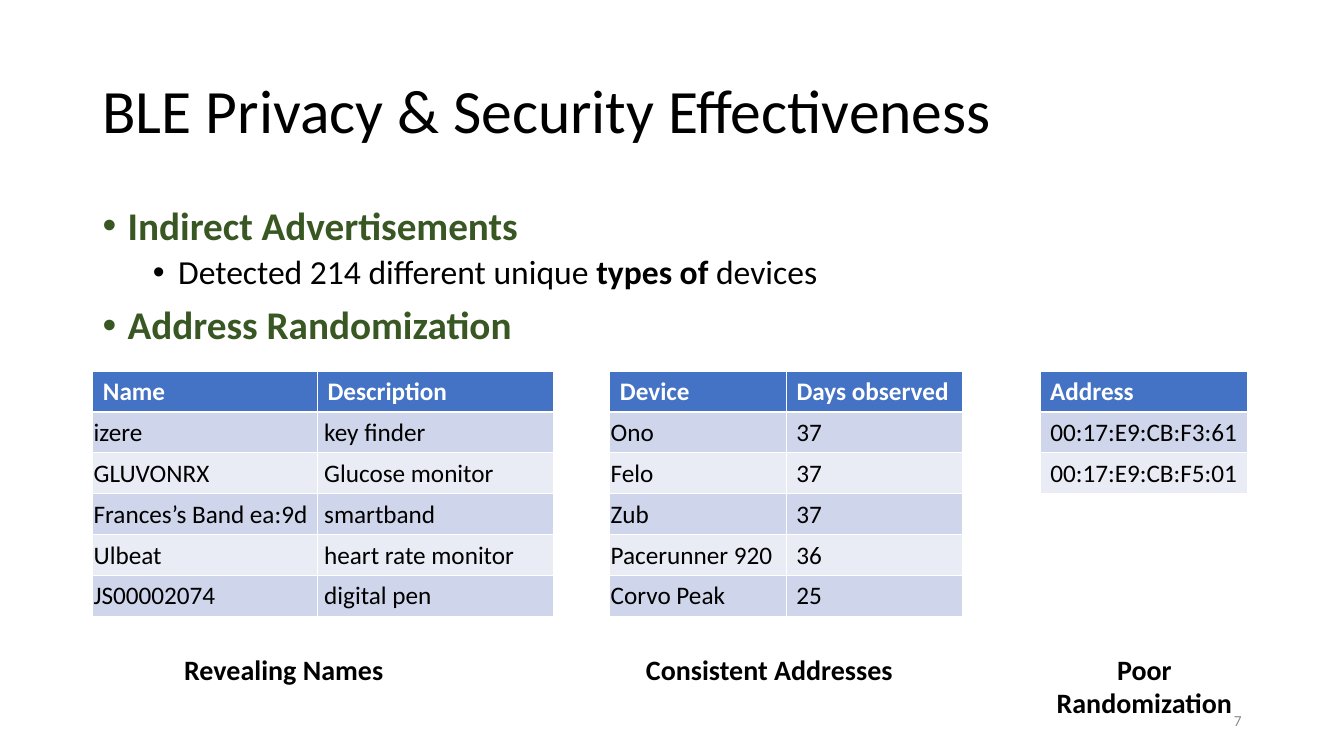
from dataclasses import dataclass

from lxml.etree import SubElement
from pptx import Presentation
from pptx.dml.color import RGBColor
from pptx.enum.text import MSO_ANCHOR as Anchor, MSO_AUTO_SIZE as AutoSize, PP_ALIGN as Align
from pptx.oxml.ns import qn
from pptx.util import Cm, Pt

TITLE = "BLE Privacy & Security Effectiveness"
PAGE_NUMBER = "7"

# (level, [(text, bold), ...])
POINTS = [
    (0, [("Indirect Advertisements", True)]),
    (1, [("Detected 214 different unique ", False), ("types of ", True), ("devices", False)]),
    (0, [("Address Randomization", True)]),
]

# Lengths in cm; pads are the left insets of the body cells, one per column
FINDINGS = [
    dict(
        left=2.34, columns=[5.66, 5.94], pads=[0.02, 0.17],
        align=Align.LEFT, header_anchor=Anchor.TOP,
        rows=[("Name", "Description"),
              ("izere", "key finder"),
              ("GLUVONRX", "Glucose monitor"),
              ("Frances’s Band ea:9d", "smartband"),
              ("Ulbeat", "heart rate monitor"),
              ("JS00002074", "digital pen")],
        caption="Revealing Names", caption_box=(4.39, 7.54), caption_align=Align.LEFT,
    ),
    dict(
        left=15.37, columns=[4.45, 4.45], pads=[0.02, 0.25],
        align=Align.LEFT, header_anchor=Anchor.MIDDLE,
        rows=[("Device", "Days observed"),
              ("Ono", "37"),
              ("Felo", "37"),
              ("Zub", "37"),
              ("Pacerunner 920", "36"),
              ("Corvo Peak", "25")],
        caption="Consistent Addresses", caption_box=(16.03, 7.54), caption_align=Align.LEFT,
    ),
    dict(
        left=26.21, columns=[5.23], pads=[0.02],
        align=Align.CENTER, header_anchor=Anchor.TOP,
        rows=[("Address",), ("00:17:E9:CB:F3:61",), ("00:17:E9:CB:F5:01",)],
        caption="Poor Randomization", caption_box=(25.65, 6.38), caption_align=Align.CENTER,
    ),
]

TABLE_TOP, ROW_HEIGHT = 9.35, 1.03
CAPTION_TOP, CAPTION_HEIGHT = 16.31, 1.12


@dataclass(frozen=True)
class Theme:
    font: str = "Calibri"
    black: str = "000000"
    white: str = "FFFFFF"
    green: str = "385723"
    gray: str = "8C8C8C"
    header: str = "4472C4"
    bands: tuple = ("CFD5EA", "E9EBF5")
    title_size: int = 44
    point_sizes: tuple = (28, 24)
    caption_size: int = 20
    cell_size: int = 18
    number_size: int = 11


THEME = Theme()


def write(paragraph, text, *, size, color=THEME.black, bold=False, align=Align.LEFT):
    """Append one formatted run to the paragraph."""
    paragraph.alignment = align
    run = paragraph.add_run()
    run.text = text
    run.font.name = THEME.font
    run.font.size = Pt(size)
    run.font.bold = bold
    run.font.color.rgb = RGBColor.from_string(color)


def place(shape, left, top, width, height):
    shape.left, shape.top, shape.width, shape.height = map(Cm, (left, top, width, height))


def set_bullet(paragraph, level):
    properties = paragraph._p.get_or_add_pPr()
    properties.set("marL", str(Cm(0.635 + 1.27 * level)))
    properties.set("indent", str(-Cm(0.635)))
    SubElement(properties, qn("a:buFont")).set("typeface", "Arial")
    SubElement(properties, qn("a:buChar")).set("char", "•")


def add_title(slide):
    title = slide.shapes.title
    place(title, 2.33, 1.01, 29.21, 3.68)
    frame = title.text_frame
    frame.auto_size = AutoSize.NONE
    frame.vertical_anchor = Anchor.MIDDLE
    frame.paragraphs[0].line_spacing = 0.9
    write(frame.paragraphs[0], TITLE, size=THEME.title_size)


def add_points(slide):
    body = slide.placeholders[1]
    place(body, 2.33, 5.07, 29.21, 12.09)
    frame = body.text_frame
    frame.auto_size = AutoSize.NONE
    for index, (level, runs) in enumerate(POINTS):
        paragraph = frame.add_paragraph() if index else frame.paragraphs[0]
        paragraph.level = level
        paragraph.line_spacing = 0.9
        paragraph.space_before = Pt(5 if level else 10)
        set_bullet(paragraph, level)
        for text, bold in runs:
            write(paragraph, text, size=THEME.point_sizes[level], bold=bold,
                  color=THEME.black if level else THEME.green)


def add_label(slide, text, box, *, anchor=Anchor.TOP, **text_format):
    label = slide.shapes.add_textbox(*map(Cm, box))
    label.text_frame.word_wrap = True
    label.text_frame.vertical_anchor = anchor
    write(label.text_frame.paragraphs[0], text, **text_format)


def fill_cell(cell, text, finding, row, column):
    cell.fill.solid()
    paragraph = cell.text_frame.paragraphs[0]
    if row == 0:
        color = THEME.header
        cell.vertical_anchor = finding["header_anchor"]
        write(paragraph, text, size=THEME.cell_size, color=THEME.white, bold=True)
    else:
        color = THEME.bands[(row - 1) % 2]
        cell.vertical_anchor = Anchor.MIDDLE
        cell.margin_left = Cm(finding["pads"][column])
        cell.margin_right = cell.margin_top = Cm(0.02)
        cell.margin_bottom = 0
        write(paragraph, text, size=THEME.cell_size, align=finding["align"])
    cell.fill.fore_color.rgb = RGBColor.from_string(color)


def add_finding(slide, finding):
    """Add one table and the caption under it."""
    rows, columns = finding["rows"], finding["columns"]
    box = finding["left"], TABLE_TOP, sum(columns), ROW_HEIGHT * len(rows)
    table = slide.shapes.add_table(len(rows), len(columns), *map(Cm, box)).table
    for column, width in enumerate(columns):
        table.columns[column].width = Cm(width)
    for row, texts in enumerate(rows):
        table.rows[row].height = Cm(ROW_HEIGHT)
        for column, text in enumerate(texts):
            fill_cell(table.cell(row, column), text, finding, row, column)

    left, width = finding["caption_box"]
    add_label(slide, finding["caption"], (left, CAPTION_TOP, width, CAPTION_HEIGHT),
              size=THEME.caption_size, bold=True, align=finding["caption_align"])


def main():
    deck = Presentation()
    deck.slide_width, deck.slide_height = Cm(33.87), Cm(19.05)
    slide = deck.slides.add_slide(deck.slide_layouts[1])
    add_title(slide)
    add_points(slide)
    add_label(slide, PAGE_NUMBER, (23.92, 17.66, 7.62, 1.01), anchor=Anchor.MIDDLE,
              size=THEME.number_size, color=THEME.gray, align=Align.RIGHT)
    for finding in FINDINGS:
        add_finding(slide, finding)
    deck.save("out.pptx")


if __name__ == "__main__":
    main()
